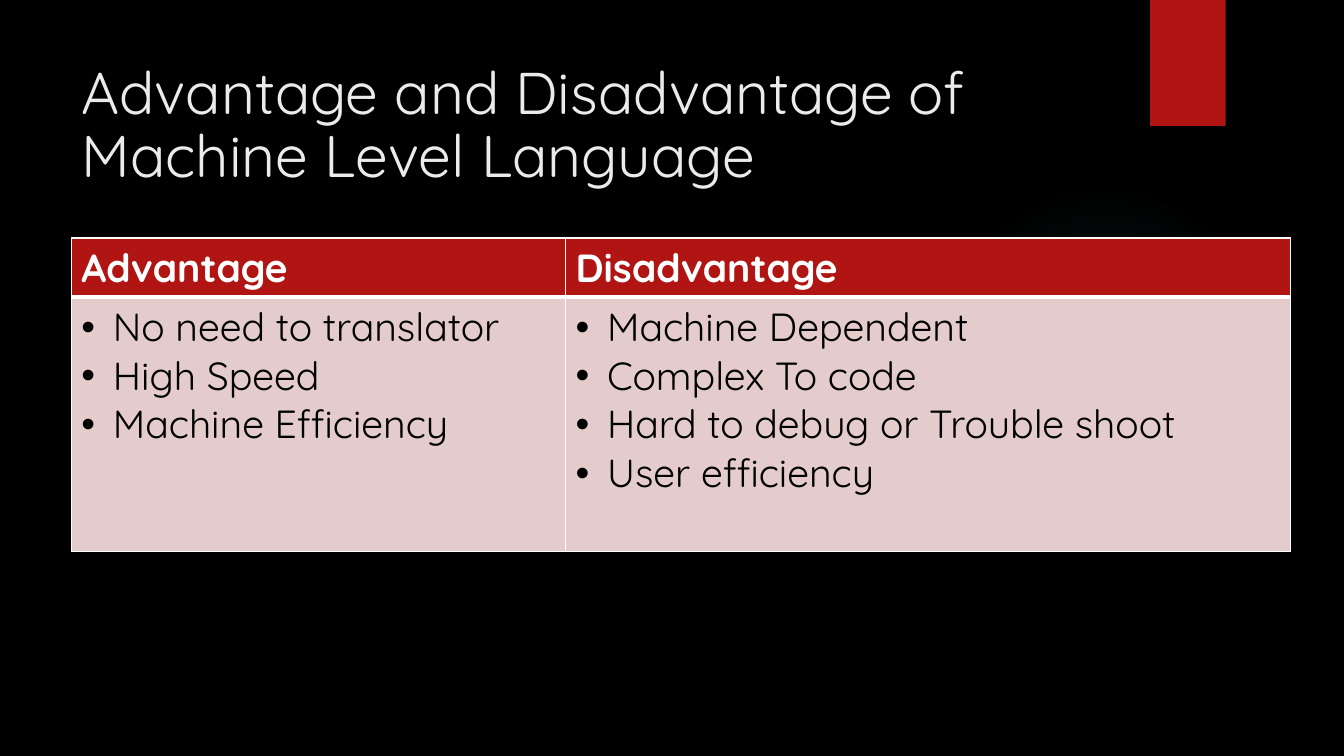
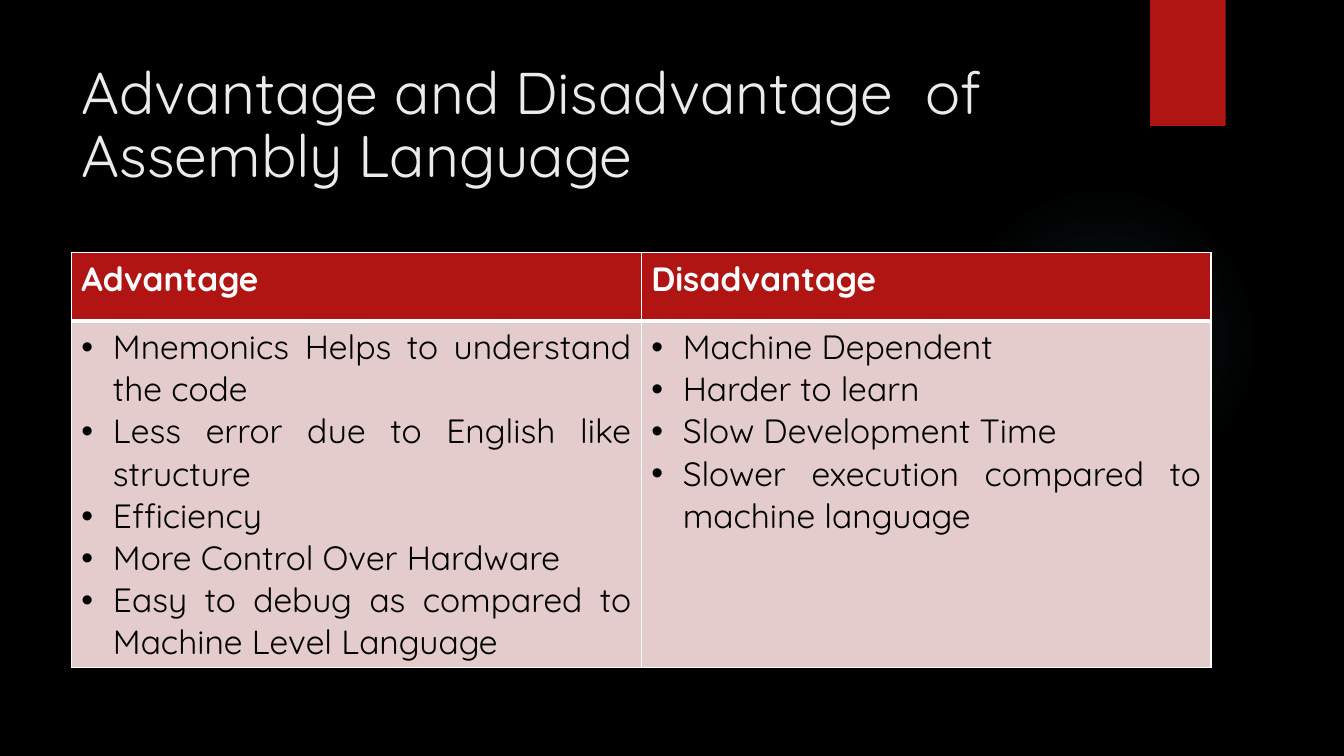
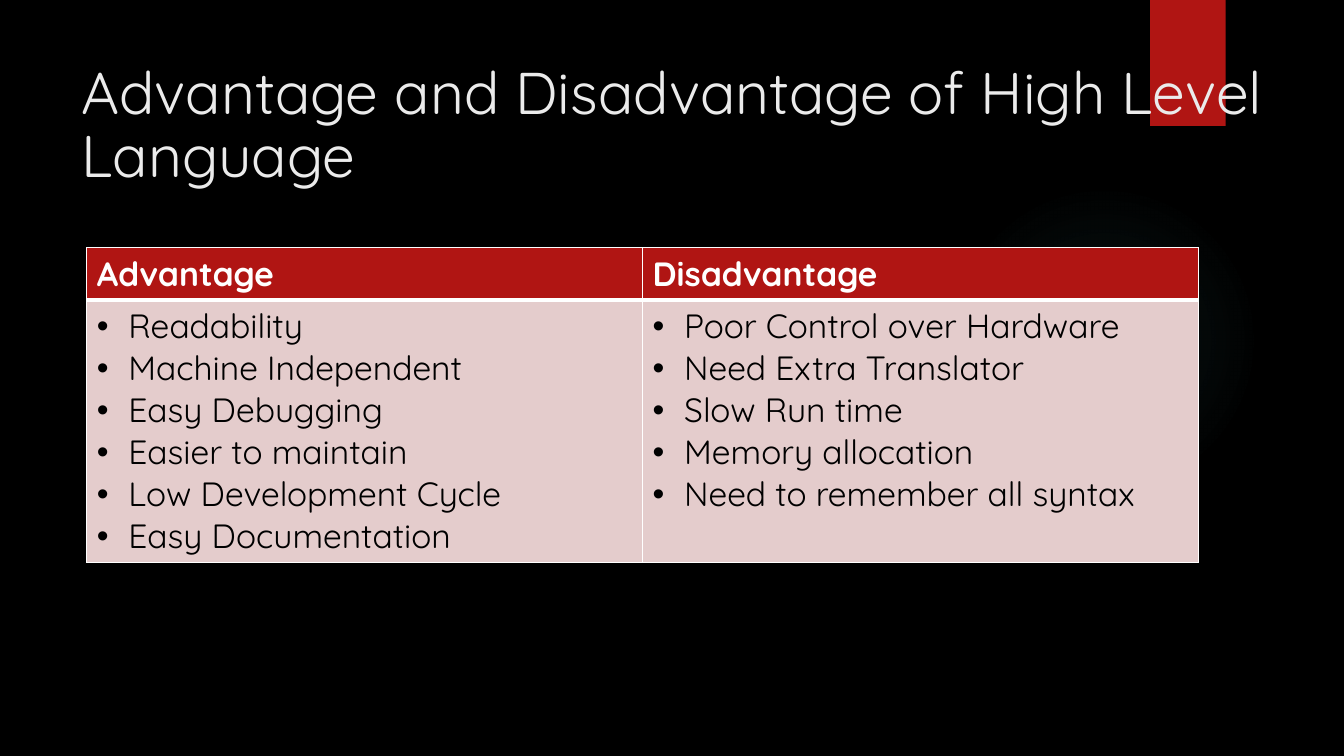
from dataclasses import dataclass

from lxml import etree
from pptx import Presentation
from pptx.dml.color import RGBColor
from pptx.enum.shapes import MSO_SHAPE
from pptx.enum.text import MSO_ANCHOR, MSO_AUTO_SIZE, PP_ALIGN
from pptx.oxml import parse_xml
from pptx.oxml.ns import qn
from pptx.util import Pt

# Content: tables give left, top, column widths, row heights, in points
HEADERS = ("Advantage", "Disadvantage")
SLIDES = [
    dict(
        title="Advantage and Disadvantage of Machine Level Language",
        title_width=741, left=51, top=170, columns=(353, 518), rows=(42, 182),
        size=28, align=PP_ALIGN.JUSTIFY,
        points=(
            ["No need to translator", "High Speed", "Machine Efficiency"],
            ["Machine Dependent", "Complex To code",
             "Hard to debug or Trouble shoot", "User efficiency"],
        ),
    ),
    dict(
        title="Advantage and Disadvantage  of Assembly Language",
        title_width=741, left=51, top=180.5, columns=(407, 407), rows=(49, 247),
        size=24, align=PP_ALIGN.JUSTIFY,
        points=(
            ["Mnemonics Helps to understand the code",
             "Less error due to English like structure",
             "Efficiency", "More Control Over Hardware",
             "Easy to debug as compared to Machine Level Language"],
            ["Machine Dependent", "Harder to learn", "Slow Development Time",
             "Slower execution compared to machine language"],
        ),
    ),
    dict(
        title="Advantage and Disadvantage of High Level Language",
        title_width=865, left=62, top=177, columns=(397, 397), rows=(37, 187),
        size=24, align=PP_ALIGN.LEFT,
        points=(
            ["Readability", "Machine Independent", "Easy Debugging",
             "Easier to maintain", "Low Development Cycle", "Easy Documentation"],
            ["Poor Control over Hardware", "Need Extra Translator",
             "Slow Run time", "Memory allocation", "Need to remember all syntax"],
        ),
    ),
]


@dataclass(frozen=True)
class Theme:
    font: str = "Quicksand"
    title_size: int = 42
    background: str = "000000"
    title: str = "EBEBEB"
    accent: str = "B01513"
    body_fill: str = "E4CCCC"
    body_text: str = "000000"
    white: str = "FFFFFF"
    glow: str = "50B9C1"
    glow_stops: tuple = ((0, 7), (36, 6), (69, 0))  # position %, opacity %
    indent: float = 22.5


THEME = Theme()
A = "http://schemas.openxmlformats.org/drawingml/2006/main"


def paint(fill, color):
    fill.solid()
    fill.fore_color.rgb = RGBColor.from_string(color)


def add_run(p, text, size, color, bold=False):
    r = p.add_run()
    r.text = text
    r.font.name = THEME.font
    r.font.size = Pt(size)
    r.font.bold = bold
    r.font.color.rgb = RGBColor.from_string(color)


# Shared decoration, placed behind the title
def add_backdrop(s):
    glow = s.shapes.add_shape(MSO_SHAPE.OVAL, Pt(677.5), Pt(132), Pt(222), Pt(222))
    ribbon = s.shapes.add_shape(MSO_SHAPE.RECTANGLE, Pt(821.5), 0, Pt(54), Pt(90))
    for index, sp in enumerate((glow, ribbon)):
        sp.shadow.inherit = False
        sp.line.fill.background()
        paint(sp.fill, THEME.accent)
        s.shapes._spTree.insert(2 + index, sp._element)
    stops = "".join(
        f'<a:gs pos="{pos * 1000}"><a:srgbClr val="{THEME.glow}">'
        f'<a:alpha val="{alpha * 1000}"/></a:srgbClr></a:gs>'
        for pos, alpha in THEME.glow_stops)
    gradient = parse_xml(
        f'<a:gradFill xmlns:a="{A}"><a:gsLst>{stops}</a:gsLst><a:path path="circle">'
        '<a:fillToRect l="50000" t="50000" r="50000" b="50000"/></a:path></a:gradFill>')
    properties = glow._element.spPr
    properties.replace(properties.find(qn("a:solidFill")), gradient)


def set_title(s, text, width):
    sp = s.shapes.title
    sp.left, sp.top, sp.width, sp.height = Pt(51), Pt(36), Pt(width), Pt(110)
    tf = sp.text_frame
    tf.word_wrap = True
    tf.auto_size = MSO_AUTO_SIZE.TEXT_TO_FIT_SHAPE
    tf.vertical_anchor = MSO_ANCHOR.TOP
    p = tf.paragraphs[0]
    p.alignment = PP_ALIGN.LEFT
    add_run(p, text, THEME.title_size, THEME.title)


# Table cells
def set_borders(cell, top, bottom):
    tc_pr = cell._tc.get_or_add_tcPr()
    for side, width in (("L", 1), ("R", 1), ("T", top), ("B", bottom)):
        line = etree.SubElement(tc_pr, qn(f"a:ln{side}"), w=str(Pt(width)))
        fill = etree.SubElement(line, qn("a:solidFill"))
        etree.SubElement(fill, qn("a:srgbClr"), val=THEME.white)


def add_bullet(p):
    p_pr = p._p.get_or_add_pPr()
    p_pr.set("marL", str(Pt(THEME.indent)))
    p_pr.set("indent", str(-Pt(THEME.indent)))
    etree.SubElement(p_pr, qn("a:buFont"), typeface="Arial")
    etree.SubElement(p_pr, qn("a:buChar"), char="•")


def fill_cell(cell, lines, size, align, header):
    set_borders(cell, *((1, 3) if header else (3, 1)))
    paint(cell.fill, THEME.accent if header else THEME.body_fill)
    tf = cell.text_frame
    for index, text in enumerate(lines):
        p = tf.add_paragraph() if index else tf.paragraphs[0]
        p.alignment = align
        if not header:
            add_bullet(p)
        add_run(p, text, size, THEME.white if header else THEME.body_text, header)


def add_comparison(s, data):
    columns, rows = data["columns"], data["rows"]
    table = s.shapes.add_table(
        len(rows), len(columns), Pt(data["left"]), Pt(data["top"]),
        Pt(sum(columns)), Pt(sum(rows))).table
    for row, height in zip(table.rows, rows):
        row.height = Pt(height)
    for c, width in enumerate(columns):
        table.columns[c].width = Pt(width)
        for r, lines in enumerate(([HEADERS[c]], data["points"][c])):
            fill_cell(table.cell(r, c), lines, data["size"], data["align"], r == 0)


def main():
    prs = Presentation()
    prs.slide_width, prs.slide_height = Pt(960), Pt(540)
    paint(prs.slide_master.background.fill, THEME.background)
    for data in SLIDES:
        s = prs.slides.add_slide(prs.slide_layouts[5])
        add_backdrop(s)
        set_title(s, data["title"], data["title_width"])
        add_comparison(s, data)
    prs.save("out.pptx")


if __name__ == "__main__":
    main()
